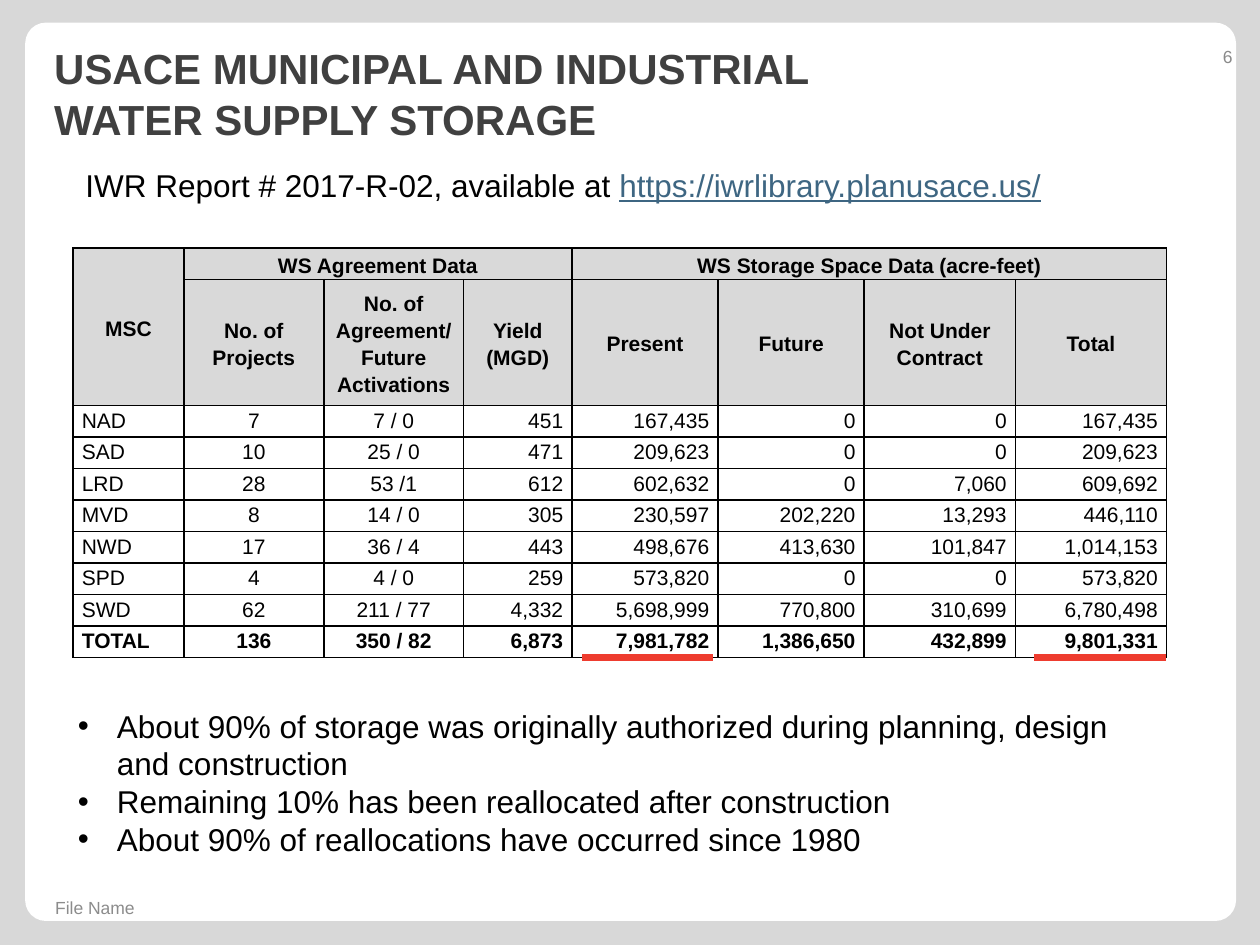
from lxml.etree import SubElement as Sub
from pptx import Presentation
from pptx.dml.color import RGBColor as RGB
from pptx.enum.shapes import MSO_CONNECTOR as Conn, MSO_SHAPE as Shape
from pptx.enum.text import MSO_ANCHOR as Anchor, PP_ALIGN as Align
from pptx.oxml.ns import qn
from pptx.util import Inches, Pt

HUES = {"back": "D8D8D8", "card": "FFFFFF", "title": "404040", "foot": "8C8C8C",
        "page": "898989", "ink": "000000", "head": "D9D9D9", "link": "3E6682",
        "mark": "EE3C2F"}

COLS = [0.88, 1.11, 1.11, 0.86, 1.16, 1.16, 1.2, 1.2]
HEADS = 2
SPANS = [(0, 0, 1, 0), (0, 1, 0, 3), (0, 4, 0, 7)]
ROWS = [
    ["MSC", "WS Agreement Data", "", "", "WS Storage Space Data (acre-feet)", "", "", ""],
    ["", "No. of Projects", "No. of Agreement/ Future Activations", "Yield (MGD)",
     "Present", "Future", "Not Under Contract", "Total"],
    ["NAD", "7", "7 / 0", "451", "167,435", "0", "0", "167,435"],
    ["SAD", "10", "25 / 0", "471", "209,623", "0", "0", "209,623"],
    ["LRD", "28", "53 /1", "612", "602,632", "0", "7,060", "609,692"],
    ["MVD", "8", "14 / 0", "305", "230,597", "202,220", "13,293", "446,110"],
    ["NWD", "17", "36 / 4", "443", "498,676", "413,630", "101,847", "1,014,153"],
    ["SPD", "4", "4 / 0", "259", "573,820", "0", "0", "573,820"],
    ["SWD", "62", "211 / 77", "4,332", "5,698,999", "770,800", "310,699", "6,780,498"],
    ["TOTAL", "136", "350 / 82", "6,873", "7,981,782", "1,386,650", "432,899", "9,801,331"],
]
NOTES = [
    "About 90% of storage was originally authorized during planning, design \vand construction",
    "Remaining 10% has been reallocated after construction",
    "About 90% of reallocations have occurred since 1980",
]


class Deck:
    face = "Arial"

    def __init__(self):
        self.file = Presentation()
        self.file.slide_width, self.file.slide_height = Inches(10), Inches(7.5)
        self.slide = self.file.slides.add_slide(self.file.slide_layouts[5])
        self.shapes = self.slide.shapes
        self.paint(self.slide.background.fill, "back")

    def paint(self, fill, hue):
        fill.solid()
        fill.fore_color.rgb = RGB.from_string(HUES[hue])

    def font(self, item, size, hue, bold=False):
        font = item.font
        font.name, font.size, font.bold = self.face, Pt(size), bold
        font.color.rgb = RGB.from_string(HUES[hue])

    def card(self, box, round):
        card = self.shapes.add_shape(Shape.ROUNDED_RECTANGLE, *map(Inches, box))
        card.adjustments[0] = round
        card.shadow.inherit = False
        self.paint(card.fill, "card")
        card.line.fill.background()
        card.element.getparent().insert(2, card.element)

    def title(self, box, text):
        head = self.shapes.title
        head.left, head.top, head.width, head.height = map(Inches, box)
        head.text_frame.vertical_anchor = Anchor.MIDDLE
        para = head.text_frame.paragraphs[0]
        para.text = text
        para.alignment = Align.LEFT
        self.font(para, 24, "title", True)

    def text(self, box, lines, size, hue, align=Align.LEFT, anchor=Anchor.TOP,
             wrap=True, dots=False):
        frame = self.shapes.add_textbox(*map(Inches, box)).text_frame
        frame.word_wrap, frame.vertical_anchor = wrap, anchor
        for i, line in enumerate(lines):
            para = frame.add_paragraph() if i else frame.paragraphs[0]
            para.text, para.alignment = line, align
            if dots:
                self.bullet(para)
            self.font(para, size, hue)
        return frame

    def bullet(self, para):
        props = para._p.get_or_add_pPr()
        props.set("marL", str(Inches(0.31)))
        props.set("indent", str(-Inches(0.31)))
        Sub(props, qn("a:buFont"), typeface=self.face)
        Sub(props, qn("a:buChar"), char="•")

    def link(self, frame, text):
        run = frame.paragraphs[0].add_run()
        run.text = text
        run.font.underline = True
        run.font.color.rgb = RGB.from_string(HUES["link"])

    def border(self, cell):
        props = cell._tc.get_or_add_tcPr()
        for side in "LRTB":
            line = Sub(props, qn("a:ln" + side), w=str(Pt(1)))
            Sub(Sub(line, qn("a:solidFill")), qn("a:srgbClr"), val=HUES["ink"])

    def cell(self, cell, text, head, bold, align):
        cell.margin_left = cell.margin_right = Inches(0.07)
        cell.margin_top = cell.margin_bottom = 0
        cell.vertical_anchor = Anchor.MIDDLE if head else Anchor.TOP
        self.border(cell)
        if head:
            self.paint(cell.fill, "head")
        else:
            cell.fill.background()
        para = cell.text_frame.paragraphs[0]
        para.text, para.alignment, para.line_spacing = text, align, 1.15
        self.font(para, 12, "ink", bold)

    def table(self, box):
        grid = self.shapes.add_table(len(ROWS), len(COLS), *map(Inches, box)).table
        grid.first_row = grid.horz_banding = False
        for col, wide in zip(grid.columns, COLS):
            col.width = Inches(wide)
        for r, row in enumerate(ROWS):
            grid.rows[r].height = Inches(1 if r == 1 else 0.25)
            head = r < HEADS
            bold = head or r == len(ROWS) - 1
            for c, text in enumerate(row):
                side = Align.LEFT if c == 0 else Align.CENTER if c < 3 else Align.RIGHT
                self.cell(grid.cell(r, c), text, head, bold, Align.CENTER if head else side)
        for top, left, low, right in SPANS:
            grid.cell(top, left).merge(grid.cell(low, right))

    def line(self, left, right, y):
        ends = map(Inches, (left, y, right, y))
        line = self.shapes.add_connector(Conn.STRAIGHT, *ends)
        line.line.width = Pt(3.75)
        line.line.color.rgb = RGB.from_string(HUES["mark"])
        Sub(line.element.spPr, qn("a:effectLst"))


def main():
    deck = Deck()
    deck.card((0.2, 0.18, 9.61, 7.13), 0.023)
    deck.title((0.33, 0.3, 9.17, 0.88),
               "USACE MUNICIPAL AND INDUSTRIAL \vWATER SUPPLY STORAGE")
    deck.text((0.34, 7.08, 3.17, 0.24), ["File Name"], 10, "foot", anchor=Anchor.MIDDLE)
    deck.text((9.08, 0.25, 0.8, 0.4), ["6"], 10, "page", Align.RIGHT, Anchor.MIDDLE)
    deck.table((0.58, 1.97, 8.67, 3.25))
    report = deck.text((0.58, 1.27, 7.85, 0.4),
                       ["IWR Report # 2017-R-02, available at "], 18, "ink", wrap=False)
    deck.link(report, "https://iwrlibrary.planusace.us/")
    deck.text((0.52, 5.56, 10.38, 1.23), NOTES, 18, "ink", wrap=False, dots=True)
    for left in (8.21, 4.62):
        deck.line(left, left + 1.04, 5.22)
    deck.file.save("out.pptx")


if __name__ == "__main__":
    main()
